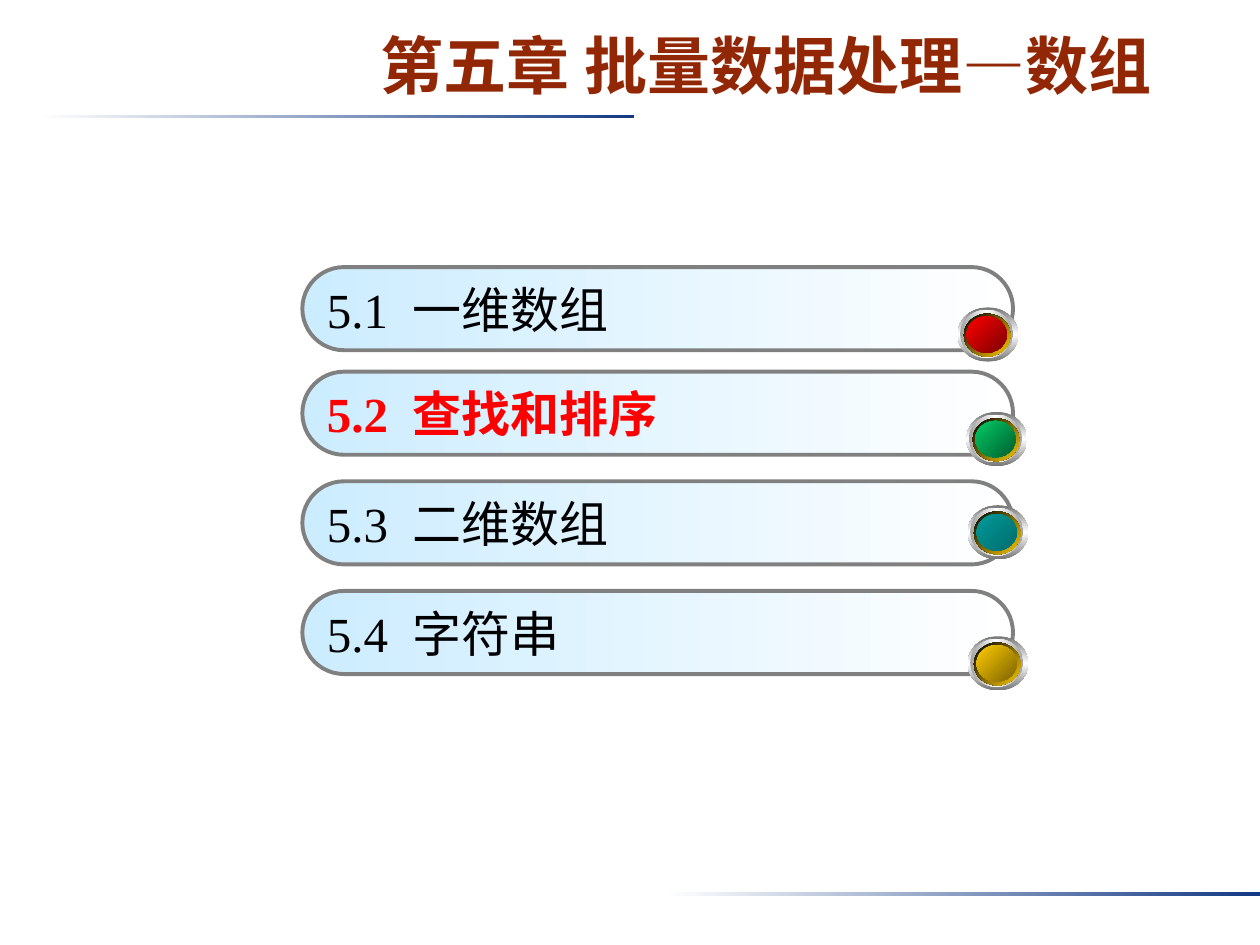
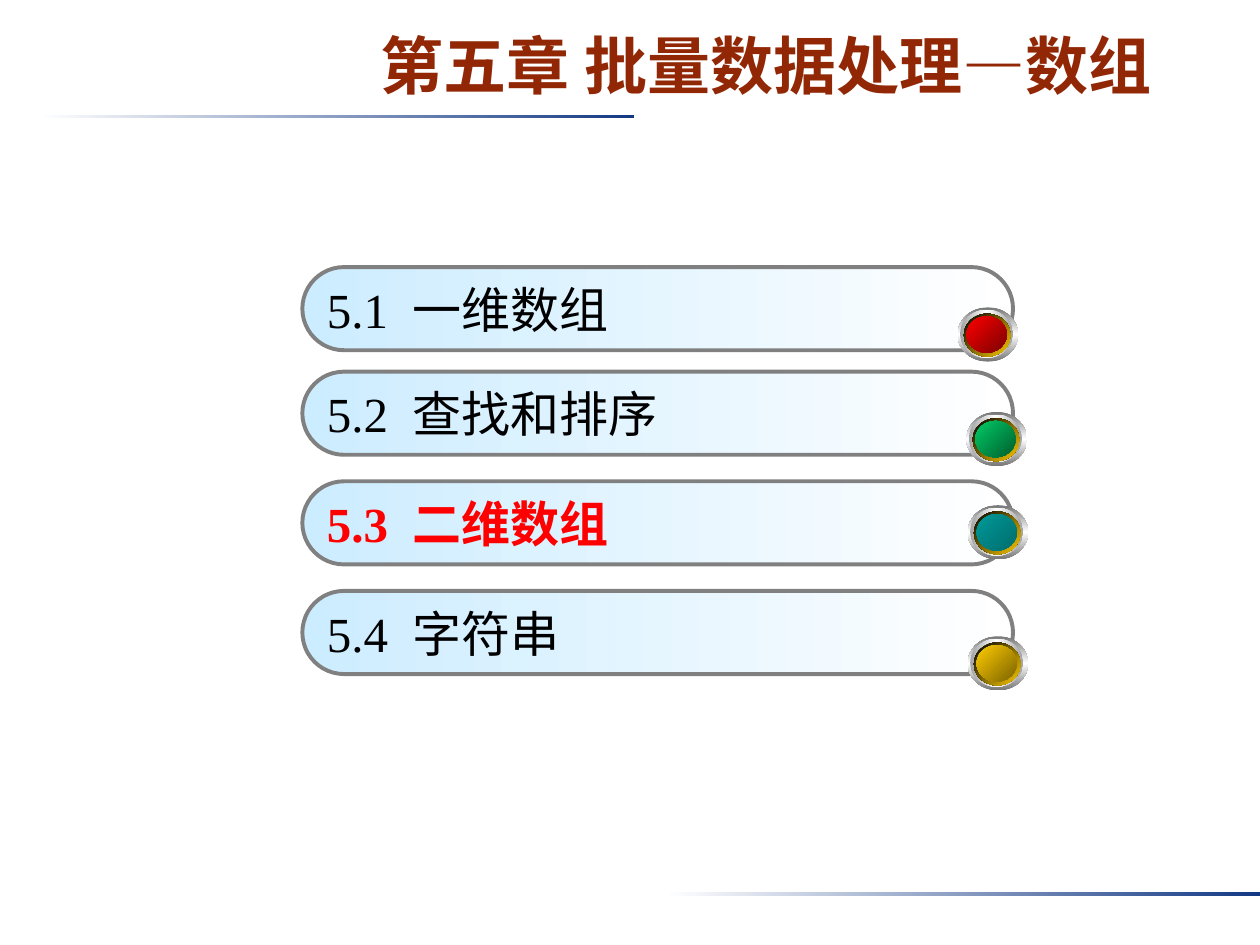
from dataclasses import dataclass
from lxml import etree
from pptx import Presentation
from pptx.dml.color import RGBColor
from pptx.enum import shapes as kinds, text as txt
from pptx.oxml import ns
from pptx.util import Inches, Pt


@dataclass(frozen=True)
class Theme:
    title: str = "922706"
    ink: str = "000000"
    mark: str = "FF0000"
    edge: str = "808080"
    band: tuple = ("FFFFFF", "133984")
    bar: tuple = ("CCECFF", "FFFFFF")
    head: str = "Arial"
    body: str = "Times New Roman"
    big: int = 36
    mid: int = 28


T = Theme()
TITLE = "第五章 批量数据处理—数组"
BANDS = [(0.31, 0.91), (5.28, 7.08)]

# Number, topic, bar top, ball corner, ball colours
TOPICS = [
    ("5.1", "一维数组", 2.12, (7.6, 2.44), ("FF0000", "7C0000")),
    ("5.2", "查找和排序", 2.95, (7.67, 3.27), ("00CC66", "005E2F")),
    ("5.3", "二维数组", 3.82, (7.68, 4.01), ("009999", "006D6D")),
    ("5.4", "字符串", 4.69, (7.68, 5.05), ("FFCC00", "7C6300")),
]

# Inset from the ball's corner, width, height, colours, angle
RINGS = [
    (0, 0.48, 0.43, ("767676", "FFFFFF", "767676"), 90),
    (0.02, 0.42, 0.38, ("A2A2A2", "FFFFFF", "A2A2A2"), 0),
    (0.05, 0.37, 0.34, ("FFFFFF", "009999", "FFFFFF"), 45),
    (0.05, 0.37, 0.34, ("000000", "FFCC00"), 45),
    (0.07, 0.32, 0.29, ("007575", "009999", "007575"), 315),
]
CORE = (0.07, 0.32, 0.29)


def blend(shape, colors, angle):
    """Fill with evenly spaced colours along a clockwise angle."""
    shape.fill.gradient()
    shape.fill.gradient_angle = -angle % 360
    stops = shape.element.spPr.find(".//" + ns.qn("a:gsLst"))
    for stop in list(stops):
        stops.remove(stop)
    for i, color in enumerate(colors):
        pos = str(100000 * i // (len(colors) - 1))
        stop = etree.SubElement(stops, ns.qn("a:gs"), pos=pos)
        etree.SubElement(stop, ns.qn("a:srgbClr"), val=color)


def draw(parent, kind, box, colors, angle=0):
    """Add a shadowless, unlined gradient shape."""
    shape = parent.shapes.add_shape(kind, *map(Inches, box))
    shape.shadow.inherit = False
    shape.line.fill.background()
    blend(shape, colors, angle)
    return shape


def style(para, name, size, color, bold):
    font = para.font
    font.name, font.size, font.bold = name, Pt(size), bold
    font.color.rgb = RGBColor.from_string(color)


def add_bands(slide):
    """Draw the two bands and move them to the slide's layout."""
    tree = slide.slide_layout.shapes.element
    for left, top in BANDS:
        band = draw(slide, kinds.MSO_SHAPE.RECTANGLE,
                    (left, top, 4.72, 0.03), T.band)
        tree.append(band.element)


def add_title(slide, box):
    title = slide.shapes.title
    title.left, title.top, title.width, title.height = map(Inches, box)
    frame = title.text_frame
    frame.text = TITLE
    frame.auto_size = txt.MSO_AUTO_SIZE.NONE
    frame.margin_top = Inches(0.06)
    para = frame.paragraphs[0]
    para.alignment = txt.PP_ALIGN.CENTER
    style(para, T.head, T.big, T.title, True)


def add_ball(group, left, top, colors):
    for inset, wide, high, shades, angle in RINGS + [(*CORE, colors, 45)]:
        draw(group, kinds.MSO_SHAPE.OVAL,
             (left + inset, top + inset, wide, high), shades, angle)


def add_bar(group, box, number, topic, active):
    bar = draw(group, kinds.MSO_SHAPE.ROUNDED_RECTANGLE, box, T.bar)
    bar.adjustments[0] = 0.5
    bar.line.color.rgb = RGBColor.from_string(T.edge)
    bar.line.width = Pt(2.25)
    frame = bar.text_frame
    frame.vertical_anchor = txt.MSO_ANCHOR.MIDDLE
    para = frame.paragraphs[0]
    para.text = f"{number}\t{topic}"
    para.alignment = txt.PP_ALIGN.LEFT
    tabs = etree.SubElement(para._p.get_or_add_pPr(), ns.qn("a:tabLst"))
    etree.SubElement(tabs, ns.qn("a:tab"), pos=str(Inches(0.68)), algn="l")
    style(para, T.body, T.mid, T.mark if active else T.ink, active)


def add_agenda(slide, left, width, current):
    for number, topic, top, ball, colors in reversed(TOPICS):
        group = slide.shapes.add_group_shape()
        add_bar(group, (left, top, width, 0.66), number, topic,
                number == current)
        add_ball(group, *ball, colors)


def main():
    prs = Presentation()
    prs.slide_width, prs.slide_height = Inches(10), Inches(7.5)
    layout = prs.slide_layouts[5]
    for current in ("5.2", "5.3"):
        slide = prs.slides.add_slide(layout)
        add_title(slide, (2.4, 0.13, 7.36, 0.75))
        add_agenda(slide, 2.4, 5.64, current)
    add_bands(slide)
    prs.save("out.pptx")


if __name__ == "__main__":
    main()
